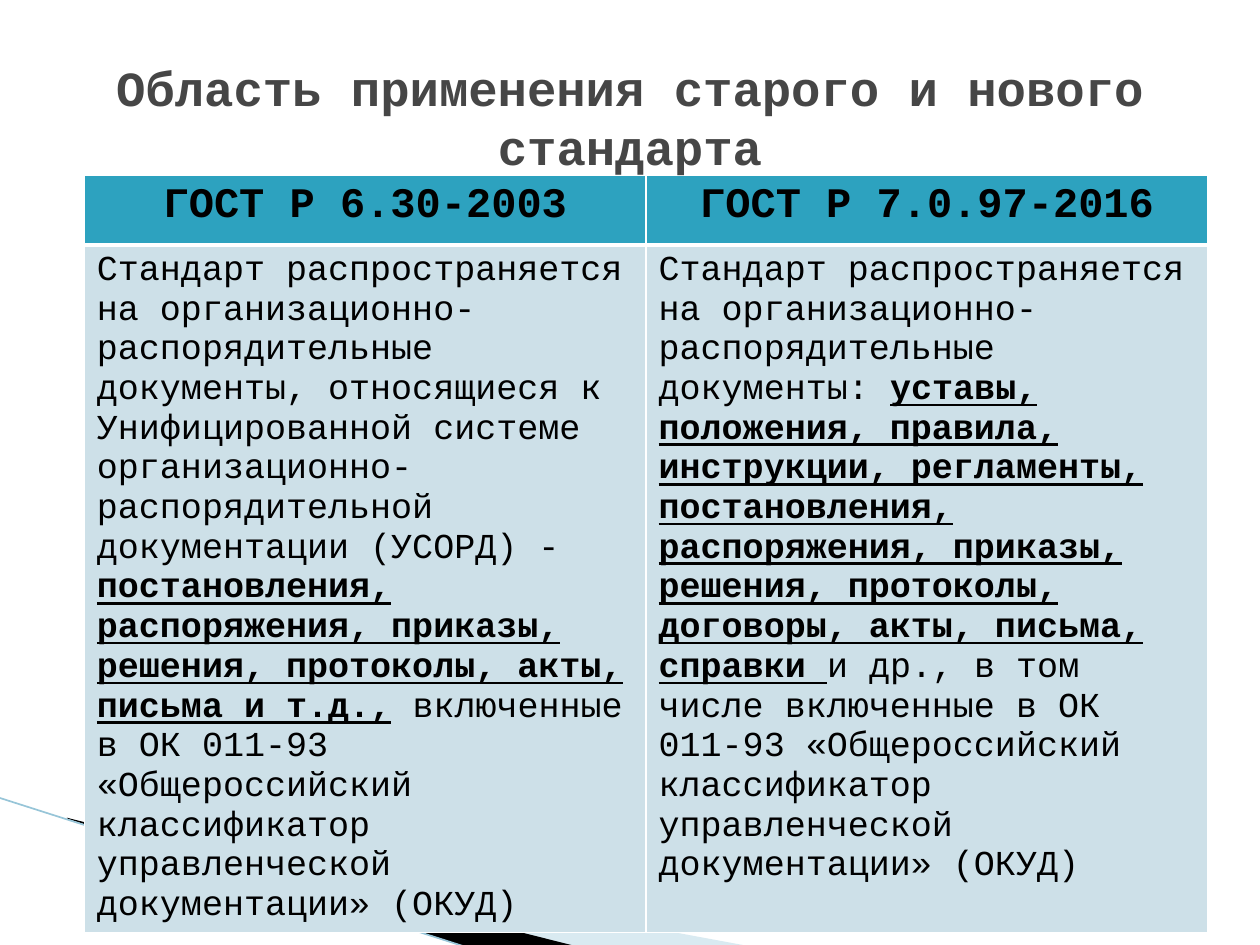
from lxml.etree import SubElement
from pptx import Presentation
from pptx.dml.color import RGBColor
from pptx.enum.text import MSO_ANCHOR, PP_ALIGN
from pptx.enum.shapes import MSO_CONNECTOR
from pptx.oxml.ns import qn
from pptx.util import Pt

WHITE = RGBColor(0xFF, 0xFF, 0xFF)
BLACK = RGBColor(0, 0, 0)
GREY = RGBColor(0x46, 0x46, 0x46)
TEAL = RGBColor(0x2D, 0xA2, 0xBF)
PALE = RGBColor(0xCD, 0xE0, 0xE8)
MIST = RGBColor(0xA0, 0xCB, 0xDC)
EDGE = RGBColor(0x97, 0xC5, 0xD8)
FACE = "Courier New"

HEADS = ["ГОСТ Р 6.30-2003", "ГОСТ Р 7.0.97-2016"]
# Each body cell: plain lead, underlined list, plain tail
BODIES = [
    ("Стандарт распространяется на организационно-распорядительные документы, "
     "относящиеся к Унифицированной системе организационно-распорядительной "
     "документации (УСОРД) - ",
     "постановления, распоряжения, приказы, решения, протоколы, акты, "
     "письма и т.д.,",
     " включенные в ОК 011-93 «Общероссийский классификатор управленческой "
     "документации» (ОКУД)"),
    ("Стандарт распространяется на организационно- распорядительные документы: ",
     "уставы, положения, правила, инструкции, регламенты, постановления, "
     "распоряжения, приказы, решения, протоколы, договоры, акты, письма, справки ",
     "и др., в том числе включенные в ОК 011-93 «Общероссийский классификатор "
     "управленческой документации» (ОКУД)"),
]


def set_font(font, size, color, bold):
    font.name, font.size, font.bold = FACE, Pt(size), bold
    font.color.rgb = color


def add_wedge(slide, left, top, points, color, alpha=None):
    spots = [(Pt(left + x), Pt(top + y)) for x, y in points]
    pen = slide.shapes.build_freeform(*spots[0], scale=1.0)
    pen.add_line_segments(spots[1:], close=True)
    shape = pen.convert_to_shape()
    shape.shadow.inherit = False
    shape.fill.solid()
    shape.fill.fore_color.rgb = color
    shape.line.fill.background()
    if alpha:
        tint = shape.element.spPr.find(".//" + qn("a:srgbClr"))
        SubElement(tint, qn("a:alpha"), val=str(alpha * 1000))


def add_swoosh(slide, left, top, width, height):
    # Two wedges and an edge line running off the bottom
    add_wedge(slide, left, top, [(39.6, 13), (width, height),
              (328.3, height), (39.6, 12.2)], MIST, 40)
    add_wedge(slide, left, top, [(38.2, 11.5), (329, height),
              (267.8, height + 0.7), (38.9, 12.2)], BLACK)
    line = slide.shapes.add_connector(
        MSO_CONNECTOR.STRAIGHT, Pt(left - 0.7), Pt(top),
        Pt(left + 267.1), Pt(top + height + 0.7))
    line.line.color.rgb = EDGE
    line.line.width = Pt(0.95)
    SubElement(line.element.spPr, qn("a:effectLst"))


def add_border(cell, under):
    props = cell._tc.get_or_add_tcPr()
    widths = {"lnL": 1, "lnR": 1, "lnT": 1, "lnB": under}
    for spot, (tag, width) in enumerate(widths.items()):
        edge = SubElement(props, qn("a:" + tag), w=str(Pt(width)))
        fill = SubElement(edge, qn("a:solidFill"))
        SubElement(fill, qn("a:srgbClr"), val=str(WHITE))
        props.insert(spot, edge)


def style_cell(cell, color, under):
    cell.fill.solid()
    cell.fill.fore_color.rgb = color
    add_border(cell, under)


def add_grid(slide, left, top, width, heights):
    frame = slide.shapes.add_table(2, 2, Pt(left), Pt(top), Pt(width),
                                   Pt(sum(heights)))
    table = frame.table
    for row, height in zip(table.rows, heights):
        row.height = Pt(height)
    for col, (head, body) in enumerate(zip(HEADS, BODIES)):
        # Header cell
        cell = table.cell(0, col)
        style_cell(cell, TEAL, 3)
        para = cell.text_frame.paragraphs[0]
        para.text = head
        para.alignment = PP_ALIGN.CENTER
        set_font(para.font, 24, BLACK, True)
        # Body cell
        cell = table.cell(1, col)
        style_cell(cell, PALE, 1)
        para = cell.text_frame.paragraphs[0]
        for part, text in enumerate(body):
            run = para.add_run()
            run.text = text
            set_font(run.font, 20, BLACK, part == 1)
            run.font.underline = part == 1


def set_title(slide, left, top, width, height):
    title = slide.shapes.title
    title.left, title.top = Pt(left), Pt(top)
    title.width, title.height = Pt(width), Pt(height)
    frame = title.text_frame
    frame.word_wrap = True
    frame.vertical_anchor = MSO_ANCHOR.MIDDLE
    para = frame.paragraphs[0]
    para.text = "Область применения старого и нового стандарта"
    para.alignment = PP_ALIGN.CENTER
    set_font(para.font, 28, GREY, True)
    # Bring the title in front of the table
    title.element.getparent().append(title.element)


def main():
    deck = Presentation()
    deck.slide_width, deck.slide_height = Pt(720), Pt(540)
    slide = deck.slides.add_slide(deck.slide_layouts[5])
    slide.background.fill.solid()
    slide.background.fill.fore_color.rgb = WHITE
    add_swoosh(slide, 0, 455.8, 428.4, 84.9)
    add_grid(slide, 48.2, 100.4, 642, [39.6, 334.8])
    set_title(slide, 36, 21.6, 648, 90)
    deck.save("out.pptx")


if __name__ == "__main__":
    main()
